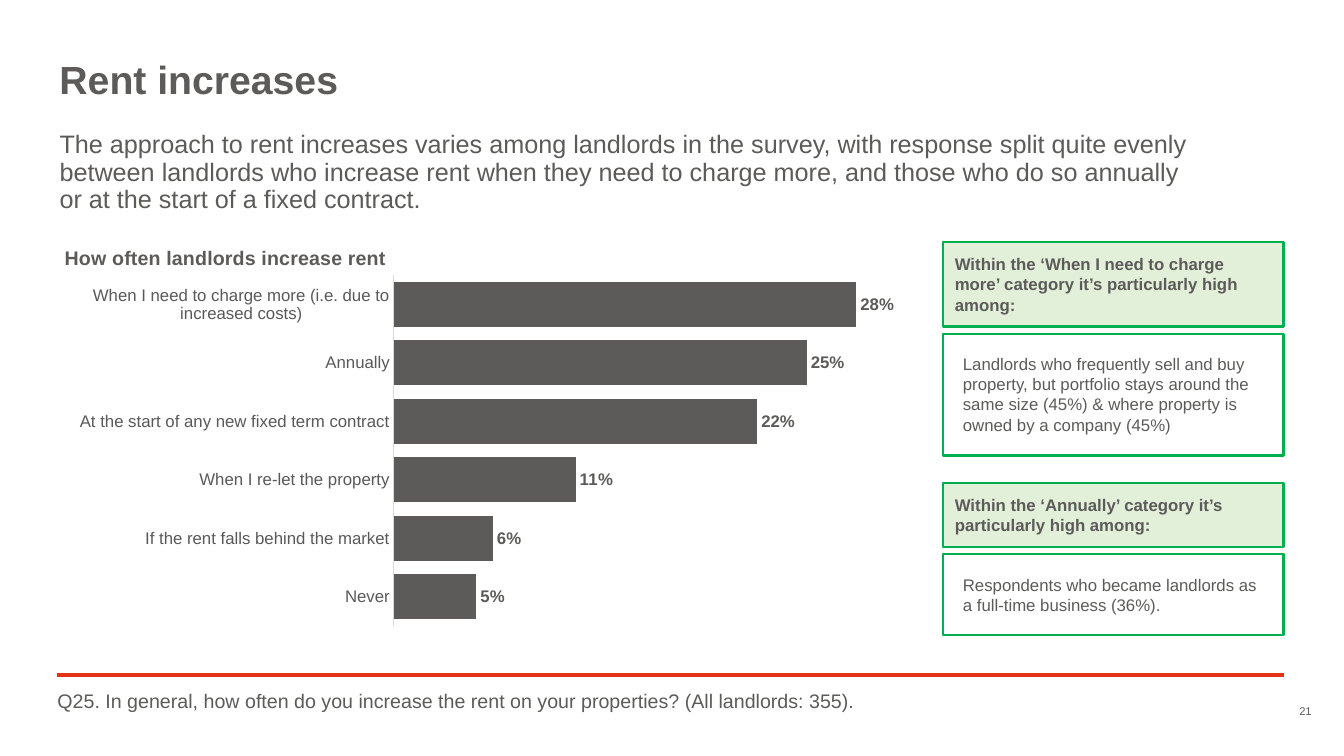
from lxml import etree
from pptx import Presentation
from pptx.chart.data import CategoryChartData as ChartData
from pptx.dml.color import RGBColor as Rgb
from pptx.enum.chart import XL_CHART_TYPE as Kind, XL_LABEL_POSITION as Spot, XL_TICK_MARK as Tick
from pptx.enum.shapes import MSO_CONNECTOR as Link, MSO_SHAPE as Form
from pptx.enum.text import MSO_ANCHOR as Anchor, MSO_AUTO_SIZE as Fit, PP_ALIGN as Align
from pptx.oxml.ns import qn
from pptx.util import Inches, Pt

HUES = {"text": "5C5B5A", "axis": "595959", "grid": "D9D9D9",
        "red": "E33317", "green": "00B050", "pale": "E2F0D9"}
FONT = "Arial"
RATES = {
    "When I need to charge more (i.e. due to increased costs)": 0.28,
    "Annually": 0.25,
    "At the start of any new fixed term contract": 0.22,
    "When I re-let the property": 0.11,
    "If the rent falls behind the market": 0.06,
    "Never": 0.05,
}
CARDS = [
    (2.4, 0.84, 1.21, "Within the ‘When I need to charge more’ category it’s particularly high among:",
     "Landlords who frequently sell and buy property, but portfolio stays around the same size (45%)"
     " & where property is owned by a company (45%)"),
    (4.79, 0.64, 0.8, "Within the ‘Annually’ category it’s particularly high among:",
     "Respondents who became landlords as a full-time business (36%)."),
]


def hue(name):
    return Rgb.from_string(HUES[name])


def style(font, size, color="text", bold=False):
    font.name, font.size, font.bold = FONT, Pt(size), bold
    font.color.rgb = hue(color)


def write(shape, text, size, bold=False, align=Align.LEFT, anchor=Anchor.TOP,
          inset=0, spacing=1.0, after=0):
    frame = shape.text_frame
    frame.word_wrap, frame.auto_size = True, Fit.NONE
    frame.vertical_anchor = anchor
    frame.margin_left = frame.margin_right = Inches(inset)
    frame.margin_top = frame.margin_bottom = Inches(inset)
    para = frame.paragraphs[0]
    para.alignment, para.line_spacing = align, spacing
    para.space_after = Pt(after)
    run = para.add_run()
    run.text = text
    style(run.font, size, bold=bold)


def label(slide, box, text, size, **look):
    write(slide.shapes.add_textbox(*map(Inches, box)), text, size, **look)


def panel(slide, box, text, fill=None, **look):
    shape = slide.shapes.add_shape(Form.RECTANGLE, *map(Inches, box))
    shape.shadow.inherit = False
    if fill:
        shape.fill.solid()
        shape.fill.fore_color.rgb = hue(fill)
    else:
        shape.fill.background()
    shape.line.color.rgb = hue("green")
    shape.line.width = Pt(1.5)
    write(shape, text, 12, **look)


def card(slide, left, top, width, head, body, title, note):
    panel(slide, (left, top, width, head), title, fill="pale", bold=True, inset=0.12)
    panel(slide, (left, top + head + 0.07, width, body), note, inset=0.2, after=5)


def place(host, index, **spots):
    old = host.find(qn("c:layout"))
    if old is not None:
        host.remove(old)
    layout = etree.Element(qn("c:layout"))
    manual = etree.SubElement(layout, qn("c:manualLayout"))
    for tag, val in spots.items():
        etree.SubElement(manual, qn("c:" + tag)).set("val", str(val))
    host.insert(index, layout)


def rates(slide, box):
    data = ChartData(number_format="0%")
    data.categories = list(RATES)
    data.add_series("Series 1", list(RATES.values()))
    chart = slide.shapes.add_chart(Kind.BAR_CLUSTERED, *map(Inches, box), data).chart
    chart.has_legend = False
    style(chart.font, 10)
    chart.has_title = True
    run = chart.chart_title.text_frame.paragraphs[0].add_run()
    run.text = "How often landlords increase rent"
    style(run.font, 14, bold=True)
    place(chart.element.find(".//" + qn("c:title")), 1,
          xMode="edge", yMode="edge", x=0.004, y=0.015)
    place(chart.element.find(".//" + qn("c:plotArea")), 0, layoutTarget="inner",
          xMode="edge", yMode="edge", x=0.38, y=0.1, w=0.56, h=0.89)

    cats, vals = chart.category_axis, chart.value_axis
    cats.reverse_order = True
    cats.major_tick_mark = cats.minor_tick_mark = Tick.NONE
    cats.format.line.color.rgb = hue("grid")
    cats.format.line.width = Pt(0.75)
    style(cats.tick_labels.font, 12, "axis")
    vals.minimum_scale, vals.maximum_scale = 0, 0.3
    vals.has_major_gridlines = False
    vals.visible = False

    plot = chart.plots[0]
    plot.gap_width, plot.vary_by_categories = 30, False
    bars = plot.series[0]
    bars.format.fill.solid()
    bars.format.fill.fore_color.rgb = hue("text")
    marks = bars.data_labels
    marks.show_value, marks.position = True, Spot.OUTSIDE_END
    marks.number_format, marks.number_format_is_linked = "0%", False
    style(marks.font, 12, bold=True)


def header(slide, left, top):
    label(slide, (left, top, 12.14, 0.42), "Rent increases", 28, bold=True, spacing=0.9)
    title = slide.shapes.title
    title.left, title.top, title.width, title.height = map(Inches, (left, top + 0.71, 11.36, 0.82))
    write(title, "The approach to rent increases varies among landlords in the survey, with response"
          " split quite evenly between landlords who increase rent when they need to charge more,"
          " and those who do so annually or at the start of a fixed contract.", 18, spacing=0.9)


def footer(slide, left, top, width):
    rule = slide.shapes.add_connector(
        Link.STRAIGHT, *map(Inches, (left, top, left + width, top)))
    rule.line.color.rgb = hue("red")
    rule.line.width = Pt(3)
    etree.SubElement(rule.element.spPr, qn("a:effectLst"))
    label(slide, (left, top + 0.16, width, 0.32),
          "Q25. In general, how often do you increase the rent on your properties?"
          " (All landlords: 355).", 14, spacing=0.9)
    label(slide, (12.62, top + 0.29, 0.39, 0.13), "21", 8, align=Align.RIGHT, anchor=Anchor.BOTTOM)


def main():
    deck = Presentation()
    deck.slide_width, deck.slide_height = Inches(13.33), Inches(7.5)
    slide = deck.slides.add_slide(deck.slide_layouts[5])
    header(slide, 0.59, 0.6)
    rates(slide, (0.57, 2.34, 8.78, 3.91))
    for top, head, body, title, note in CARDS:
        card(slide, 9.35, top, 3.38, head, body, title, note)
    footer(slide, 0.57, 6.7, 12.16)
    deck.save("out.pptx")


if __name__ == "__main__":
    main()
